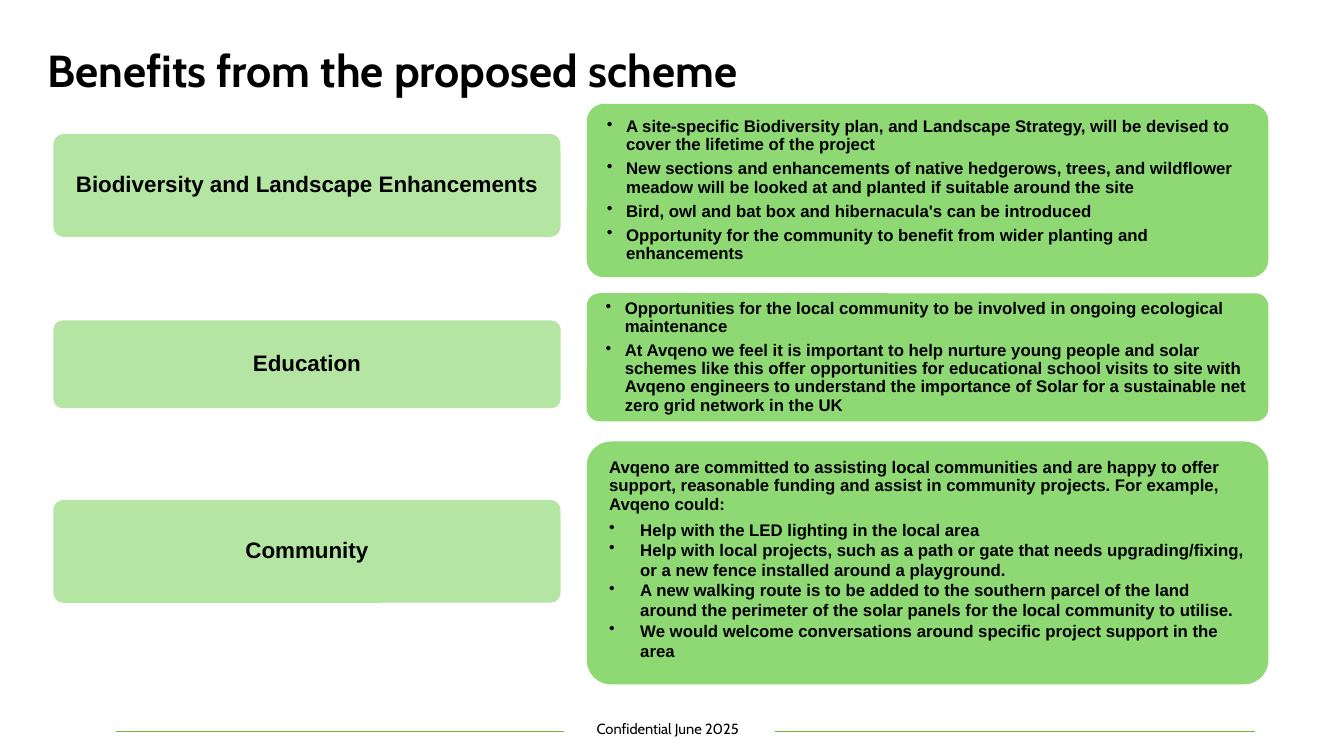
from dataclasses import dataclass

import lxml.etree
import pptx
import pptx.dml.color
import pptx.enum.shapes
import pptx.enum.text
import pptx.oxml.ns
import pptx.util

PX = 9144
ALIGN = pptx.enum.text.PP_ALIGN
ANCHOR = pptx.enum.text.MSO_ANCHOR


@dataclass(frozen=True)
class Theme:
    """Colours, fonts and type sizes of the slide."""
    ink: str = "000000"
    topic: str = "B4E5A2"
    detail: str = "8ED973"
    rule: str = "75B840"
    heading_font: str = "Cabin"
    body_font: str = "Arial"
    title_size: float = 32
    topic_size: float = 16
    detail_size: float = 12
    footer_size: float = 10.5
    tight: float = 0.9
    gap: float = 4.2


@dataclass(frozen=True)
class Box:
    """A rectangle in px."""
    left: int
    top: int
    width: int
    height: int

    def emu(self) -> list[int]:
        """Return the rectangle in EMU."""
        return [PX * n for n in (self.left, self.top, self.width, self.height)]


@dataclass(frozen=True)
class Benefit:
    """A topic with its explanatory panel."""
    topic: str
    topic_top: int
    topic_height: int
    panel_top: int
    panel_height: int
    bullets: tuple[str, ...]
    intro: str = ""
    bottom_inset: int = 0


THEME = Theme()
BENEFITS = (
    Benefit("Biodiversity and Landscape Enhancements", 133, 102, 103, 172, (
        "A site-specific Biodiversity plan, and Landscape Strategy, will be devised to cover the lifetime of the project",
        "New sections and enhancements of native hedgerows, trees, and wildflower meadow will be looked at and planted if suitable around the site",
        "Bird, owl and bat box and hibernacula's can be introduced",
        "Opportunity for the community to benefit from wider planting and enhancements",
    )),
    Benefit("Education", 318, 87, 291, 127, (
        "Opportunities for the local community to be involved in ongoing ecological maintenance",
        "At Avqeno we feel it is important to help nurture young people and solar schemes like this offer opportunities for educational school visits to site with Avqeno engineers to understand the importance of Solar for a sustainable net zero grid network in the UK",
    )),
    Benefit("Community", 496, 102, 438, 241, (
        "Help with the LED lighting in the local area",
        "Help with local projects, such as a path or gate that needs upgrading/fixing, or a new fence installed around a playground.",
        "A new walking route is to be added to the southern parcel of the land around the perimeter of the solar panels for the local community to utilise.",
        "We would welcome conversations around specific project support in the area",
    ), "Avqeno are committed to assisting local communities and are happy to offer support, reasonable funding and assist in community projects. For example, Avqeno could:", 6),
)
FOOTER_RULES = ((115, 559), (769, 1245))


def rgb(colour: str) -> pptx.dml.color.RGBColor:
    """Turn a hex colour into an RGBColor."""
    return pptx.dml.color.RGBColor.from_string(colour)


def style(paragraph, font: str, size: float, bold: bool = True) -> None:
    """Set the type of every run in a paragraph."""
    for run in paragraph.runs:
        run.font.name = font
        run.font.size = pptx.util.Pt(size)
        run.font.bold = bold
        run.font.color.rgb = rgb(THEME.ink)


def add_bullet(paragraph, indent: int) -> None:
    """Give a paragraph a hanging bullet."""
    properties = paragraph._p.get_or_add_pPr()
    properties.set("marL", str(indent * PX))
    properties.set("indent", str(-indent * PX))
    lxml.etree.SubElement(properties, pptx.oxml.ns.qn("a:buChar"), char="•")


def add_panel(slide, box: Box, colour: str, insets: tuple[int, int, int, int]):
    """Draw a rounded panel and return its text frame."""
    panel = slide.shapes.add_shape(
        pptx.enum.shapes.MSO_SHAPE.ROUNDED_RECTANGLE, *box.emu())
    panel.adjustments[0] = 0.1
    panel.shadow.inherit = False
    panel.fill.solid()
    panel.fill.fore_color.rgb = rgb(colour)
    panel.line.fill.background()
    frame = panel.text_frame
    frame.word_wrap = True
    frame.vertical_anchor = ANCHOR.MIDDLE
    (frame.margin_left, frame.margin_top,
     frame.margin_right, frame.margin_bottom) = [PX * n for n in insets]
    return frame


def add_benefit(slide, benefit: Benefit) -> None:
    """Draw a topic and its explanatory panel."""
    topic = add_panel(slide, Box(53, benefit.topic_top, 503, benefit.topic_height),
                      THEME.topic, (5, 5, 5, 5))
    topic.text = benefit.topic
    heading = topic.paragraphs[0]
    heading.alignment = ALIGN.CENTER
    heading.line_spacing = THEME.tight
    style(heading, THEME.body_font, THEME.topic_size)

    detail = add_panel(slide, Box(582, benefit.panel_top, 676, benefit.panel_height),
                       THEME.detail, (15, 0, 12, benefit.bottom_inset))
    lines = ((benefit.intro,) if benefit.intro else ()) + benefit.bullets
    detail.text = "\n".join(lines)
    for paragraph, line in zip(detail.paragraphs, lines):
        paragraph.alignment = ALIGN.LEFT
        if line == benefit.intro or not benefit.intro:
            paragraph.line_spacing = THEME.tight
            paragraph.space_after = pptx.util.Pt(THEME.gap)
        if line != benefit.intro:
            add_bullet(paragraph, 31 if benefit.intro else 19)
        style(paragraph, THEME.body_font, THEME.detail_size)


def add_caption(slide, box: Box, text: str, size: float, bold: bool):
    """Write one line in the heading font and return its paragraph."""
    frame = slide.shapes.add_textbox(*box.emu()).text_frame
    frame.word_wrap = True
    frame.text = text
    style(frame.paragraphs[0], THEME.heading_font, size, bold)
    return frame.paragraphs[0]


def add_footer_rule(slide, start: int, end: int) -> None:
    """Draw a thin line beside the footer."""
    y = 726 * PX
    rule = slide.shapes.add_connector(
        pptx.enum.shapes.MSO_CONNECTOR.STRAIGHT, start * PX, y, end * PX, y)
    rule.line.color.rgb = rgb(THEME.rule)
    rule.line.width = pptx.util.Pt(0.75)
    lxml.etree.SubElement(rule._element.spPr, pptx.oxml.ns.qn("a:effectLst"))


def main() -> None:
    """Build and save the slide."""
    deck = pptx.Presentation()
    deck.slide_width, deck.slide_height = 1333 * PX, 750 * PX
    slide = deck.slides.add_slide(deck.slide_layouts[6])
    title = add_caption(slide, Box(37, 41, 1264, 61),
                        "Benefits from the proposed scheme", THEME.title_size, True)
    title.line_spacing = 0.95
    for benefit in BENEFITS:
        add_benefit(slide, benefit)
    for start, end in FOOTER_RULES:
        add_footer_rule(slide, start, end)
    add_caption(slide, Box(582, 709, 173, 29),
                "Confidential June 2025", THEME.footer_size, False)
    deck.save("out.pptx")


if __name__ == "__main__":
    main()
